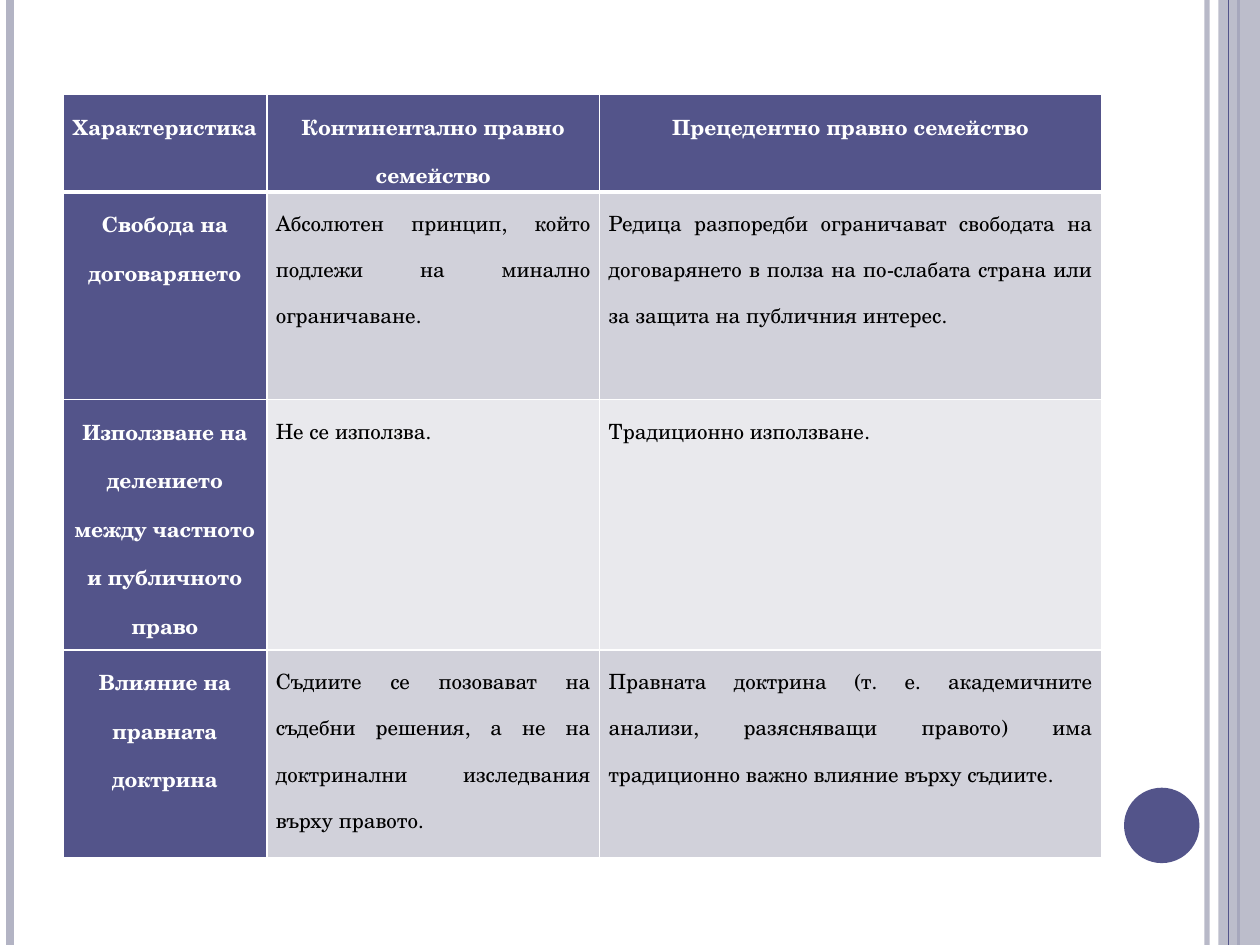
import dataclasses

import pptx
import pptx.dml.color
import pptx.enum.shapes
import pptx.enum.text
import pptx.oxml
import pptx.oxml.ns
import pptx.util
from pptx.util import Cm

FONT = "TeX Gyre Schola"
HUES = {
    "main": "53548A",
    "edge": "B3B4C4",
    "dark": "D1D1DA",
    "pale": "E9E9ED",
    "white": "FFFFFF",
    "black": "000000",
}
WIDE, HIGH = 25.4, 19.05
COLS = (4.11, 6.71, 10.12)
ROWS = (1.6, 4.19, 5.05, 4.19)
TEXTS = (
    ("Характеристика", "Континентално правно семейство",
     "Прецедентно правно семейство"),
    ("Свобода на договарянето",
     "Абсолютен принцип, който подлежи на минално ограничаване.",
     "Редица разпоредби ограничават свободата на договарянето в полза на "
     "по-слабата страна или за защита на публичния интерес."),
    ("Използване на делението между частното и публичното право",
     "Не се използва.", "Традиционно използване."),
    ("Влияние на правната доктрина",
     "Съдиите се позовават на съдебни решения, а не на доктринални "
     "изследвания върху правото.",
     "Правната доктрина (т. е. академичните анализи, разясняващи правото) "
     "има традиционно важно влияние върху съдиите."),
)


@dataclasses.dataclass
class Stripe:
    x: float
    width: float
    hue: str
    alpha: int = 100


@dataclasses.dataclass
class Block:
    kind: int
    x: float
    y: float
    w: float
    h: float
    hue: str
    alpha: int = 100


LINES = (
    Stripe(24.33, 3, "edge", 93),
    Stripe(0.2, 4.5, "edge"),
    Stripe(24.97, 1.5, "main"),
)
BAND = Block(pptx.enum.shapes.MSO_SHAPE.RECTANGLE,
             24.56, 0, 0.84, HIGH, "edge", 87)
INNER = Stripe(24.77, 0.75, "main")
DISC = Block(pptx.enum.shapes.MSO_SHAPE.OVAL,
             22.66, 15.88, 1.52, 1.52, "main")


def color(hue: str):
    return pptx.dml.color.RGBColor.from_string(HUES[hue])


def fade(shape, alpha: int) -> None:
    """Set the opacity, in percent, of the shape's only colour."""
    if alpha < 100:
        tone = next(shape._element.spPr.iter(pptx.oxml.ns.qn("a:srgbClr")))
        node = pptx.oxml.parse_xml(
            f'<a:alpha {pptx.oxml.ns.nsdecls("a")} val="{alpha * 1000}"/>')
        tone.append(node)


def draw_line(slide, item: Stripe) -> None:
    line = slide.shapes.add_connector(
        pptx.enum.shapes.MSO_CONNECTOR.STRAIGHT,
        Cm(item.x), Cm(0), Cm(item.x), Cm(HIGH))
    line.line.color.rgb = color(item.hue)
    line.line.width = pptx.util.Pt(item.width)
    fade(line, item.alpha)
    line._element.spPr.append(pptx.oxml.parse_xml(
        f'<a:effectLst {pptx.oxml.ns.nsdecls("a")}/>'))


def draw_block(slide, item: Block) -> None:
    shape = slide.shapes.add_shape(
        item.kind, Cm(item.x), Cm(item.y), Cm(item.w), Cm(item.h))
    shape.shadow.inherit = False
    shape.fill.solid()
    shape.fill.fore_color.rgb = color(item.hue)
    shape.line.fill.background()
    fade(shape, item.alpha)


def write(frame, text: str, *, hue: str, bold: bool, align) -> None:
    par = frame.paragraphs[0]
    par.alignment = align
    par.line_spacing = 1.5
    run = par.add_run()
    run.text = text
    run.font.name = FONT
    run.font.size = pptx.util.Pt(12)
    run.font.bold = bold
    run.font.color.rgb = color(hue)


def set_edges(cell, top: float, bottom: float) -> None:
    """Give the cell white borders; widths are in points."""
    props = cell._tc.get_or_add_tcPr()
    sides = {"L": 1, "R": 1, "T": top, "B": bottom}
    for place, (side, width) in enumerate(sides.items()):
        props.insert(place, pptx.oxml.parse_xml(
            f'<a:ln{side} {pptx.oxml.ns.nsdecls("a")} w="{width * 12700}">'
            f'<a:solidFill><a:srgbClr val="{HUES["white"]}"/></a:solidFill>'
            f'</a:ln{side}>'))


def fill_cell(cell, text: str, row: int, col: int) -> None:
    head = row == 0 or col == 0
    cell.margin_left = cell.margin_right = Cm(0.18)
    cell.margin_top = cell.margin_bottom = 0
    cell.fill.solid()
    cell.fill.fore_color.rgb = color(
        "main" if head else "dark" if row % 2 else "pale")
    set_edges(cell, 3 if row == 1 else 1, 3 if row == 0 else 1)
    kinds = pptx.enum.text.PP_ALIGN
    write(cell.text_frame, text, hue="white" if head else "black", bold=head,
          align=kinds.CENTER if head else kinds.JUSTIFY)


def draw_table(slide) -> None:
    table = slide.shapes.add_table(
        len(ROWS), len(COLS), Cm(1.27), Cm(1.91),
        Cm(sum(COLS)), Cm(sum(ROWS))).table
    for col, width in zip(table.columns, COLS):
        col.width = Cm(width)
    for row, height in zip(table.rows, ROWS):
        row.height = Cm(height)
    for r, texts in enumerate(TEXTS):
        for c, text in enumerate(texts):
            fill_cell(table.cell(r, c), text, r, c)


def main() -> None:
    deck = pptx.Presentation()
    deck.slide_width, deck.slide_height = Cm(WIDE), Cm(HIGH)
    slide = deck.slides.add_slide(deck.slide_layouts[6])
    for item in LINES:
        draw_line(slide, item)
    draw_block(slide, BAND)
    draw_line(slide, INNER)
    draw_block(slide, DISC)
    draw_table(slide)
    deck.save("out.pptx")


if __name__ == "__main__":
    main()
